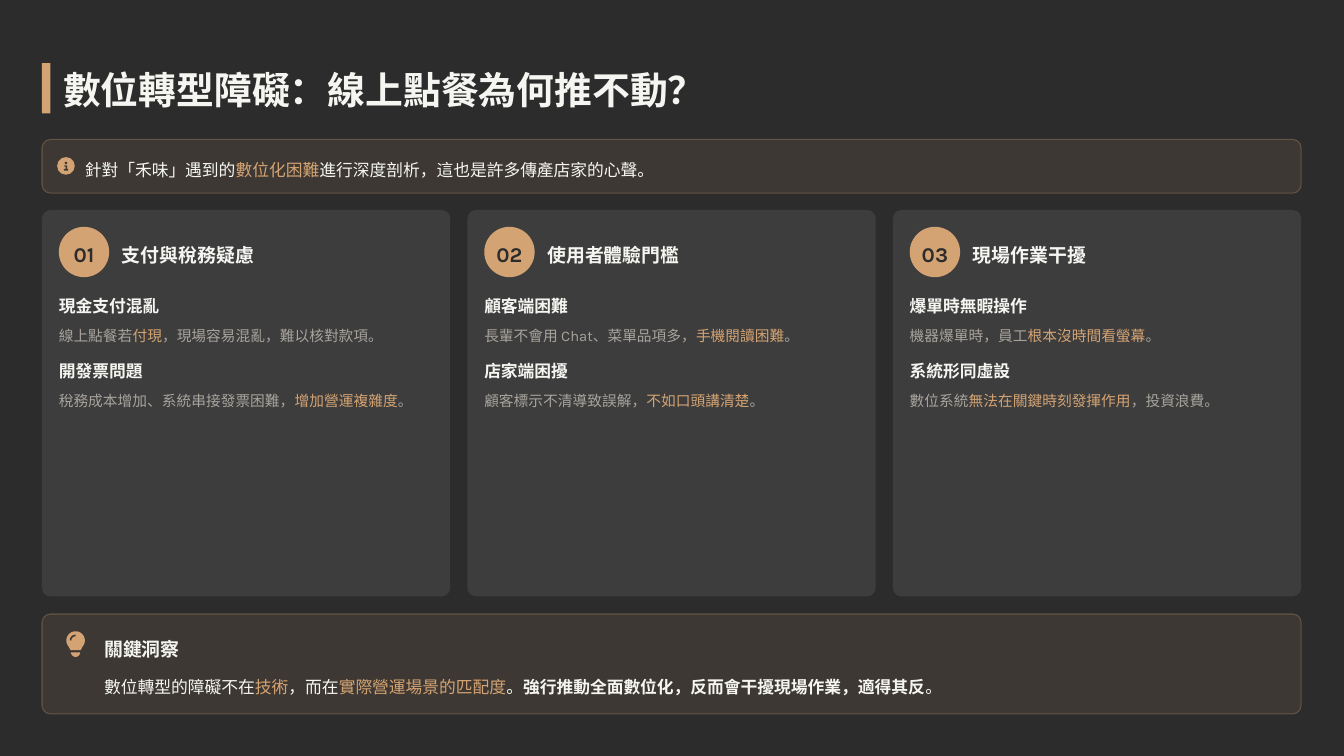
"""Build the slide on what holds back online ordering."""
import math
from dataclasses import dataclass
from typing import Any

import lxml.etree
import pptx
import pptx.dml.color
import pptx.enum.shapes
import pptx.enum.text
import pptx.oxml.ns
import pptx.util

UNIT = 10160
KARLA = "Karla"
NOTO = "Noto Sans CJK SC"
HUES = {
    "back": "2C2C2C",
    "card": "3D3D3D",
    "gold": "D4A373",
    "light": "F5F5F1",
    "gray": "A8A39D",
    "band": "3D3833",
}
KINDS = pptx.enum.shapes.MSO_SHAPE
ALIGN = pptx.enum.text.PP_ALIGN
ANCHOR = pptx.enum.text.MSO_ANCHOR


@dataclass(frozen=True)
class Style:
    size: int
    font: str = KARLA
    hue: str = "light"
    bold: bool = False


@dataclass(frozen=True)
class Line:
    text: str
    style: Style
    space: float
    before: int = 0


@dataclass(frozen=True)
class Card:
    title: str
    items: tuple[tuple[str, str], ...]


HEAD = Style(18, NOTO, bold=True)
ITEM = Style(16, bold=True)
NOTE = Style(14, hue="gray")
PLAIN = Style(16)

CARDS = (
    Card("支付與稅務疑慮", (
        ("現金支付混亂", "線上點餐若|*付現|，現場容易混亂，難以核對款項。"),
        ("開發票問題", "稅務成本增加、系統串接發票困難，|*增加營運複雜度|。"),
    )),
    Card("使用者體驗門檻", (
        ("顧客端困難", "長輩不會用 Chat、菜單品項多，|*手機閱讀困難|。"),
        ("店家端困擾", "顧客標示不清導致誤解，|*不如口頭講清楚|。"),
    )),
    Card("現場作業干擾", (
        ("爆單時無暇操作", "機器爆單時，員工|*根本沒時間看螢幕|。"),
        ("系統形同虛設", "數位系統|*無法在關鍵時刻發揮作用|，投資浪費。"),
    )),
)


def px(num: float) -> int:
    return round(num * UNIT)


def tint(hue: str) -> Any:
    return pptx.dml.color.RGBColor.from_string(HUES[hue])


def fade(part: Any, share: int) -> None:
    tag = pptx.oxml.ns.qn("a:srgbClr")
    for node in part.iter(tag):
        lxml.etree.SubElement(node, pptx.oxml.ns.qn("a:alpha"), val=str(share * 1000))


def paint(shape: Any, hue: str) -> None:
    shape.shadow.inherit = False
    shape.fill.solid()
    shape.fill.fore_color.rgb = tint(hue)
    shape.line.fill.background()


def block(slide: Any, kind: Any, x: float, y: float, w: float, h: float, hue: str) -> Any:
    shape = slide.shapes.add_shape(kind, px(x), px(y), px(w), px(h))
    paint(shape, hue)
    return shape


def panel(slide: Any, x: float, y: float, w: float, h: float, hue: str) -> Any:
    shape = block(slide, KINDS.ROUNDED_RECTANGLE, x, y, w, h, hue)
    shape.adjustments[0] = 10 / min(w, h)
    return shape


def band(slide: Any, y: int, h: int) -> None:
    shape = panel(slide, 50, y, 1499, h, "gold")
    fade(shape.fill._xPr.find(pptx.oxml.ns.qn("a:solidFill")), 10)
    shape.line.color.rgb = tint("gold")
    shape.line.width = pptx.util.Pt(1)
    fade(shape.line._ln, 30)


def trace(slide: Any, spots: list[tuple[float, float]], close: bool = True) -> Any:
    ends = [(px(x), px(y)) for x, y in spots]
    form = slide.shapes.build_freeform(*ends[0])
    form.add_line_segments(ends[1:], close=close)
    return form.convert_to_shape()


def arc(x: float, y: float, r: float, start: int, stop: int) -> list[tuple[float, float]]:
    turns = [math.radians(deg) for deg in range(start, stop + 1, 10)]
    return [(x + r * math.cos(t), y + r * math.sin(t)) for t in turns]


def dress(run: Any, style: Style, mark: str) -> None:
    run.font.size = pptx.util.Pt(style.size)
    run.font.name = style.font
    run.font.bold = style.bold or mark == "#"
    run.font.color.rgb = tint("gold" if mark == "*" else style.hue)
    props = run.font._element
    lxml.etree.SubElement(props, pptx.oxml.ns.qn("a:ea"), typeface=NOTO)


def write(shape: Any, box: tuple[float, ...], lines: list[Line],
          anchor: Any = ANCHOR.MIDDLE, align: Any = ALIGN.LEFT) -> None:
    shape.left, shape.top, shape.width, shape.height = map(px, box)
    frame = shape.text_frame
    frame.auto_size = pptx.enum.text.MSO_AUTO_SIZE.NONE
    frame.word_wrap = True
    frame.vertical_anchor = anchor
    frame.margin_left = frame.margin_right = frame.margin_top = frame.margin_bottom = 0
    for rank, line in enumerate(lines):
        para = frame.add_paragraph() if rank else frame.paragraphs[0]
        props = para._p.get_or_add_pPr()
        props.set("marL", "0")
        props.set("indent", "0")
        lxml.etree.SubElement(props, pptx.oxml.ns.qn("a:buNone"))
        para.alignment = align
        para.space_before = pptx.util.Pt(line.before)
        para.line_spacing = line.space if line.space < 5 else pptx.util.Pt(line.space)
        for piece in line.text.split("|"):
            mark = piece[0] if piece[0] in "*#" else ""
            run = para.add_run()
            run.text = piece[len(mark):]
            dress(run, line.style, mark)
    shape.element.getparent().append(shape.element)


def label(slide: Any, box: tuple[float, ...], line: Line, align: Any = ALIGN.LEFT) -> None:
    write(slide.shapes.add_textbox(0, 0, 0, 0), box, [line], align=align)


def column(slide: Any, rank: int, card: Card) -> None:
    left = 50 + rank * 506.5
    panel(slide, left, 250, 486, 460, "card")
    block(slide, KINDS.OVAL, left + 20, 270, 60, 60, "gold")
    number = Line(f"{rank + 1:02}", Style(20, hue="back", bold=True), 1.2)
    label(slide, (left + 20, 282, 60, 35), number, ALIGN.CENTER)
    label(slide, (left + 95, 282, 374, 35), Line(card.title, HEAD, 1.3))
    lines = []
    for head, note in card.items:
        lines += [Line(head, ITEM, 27, 8 if lines else 0), Line(note, NOTE, 27)]
    write(slide.placeholders[rank + 1], (left + 20, 342, 456, 148), lines, ANCHOR.TOP)


def badge(slide: Any) -> None:
    block(slide, KINDS.OVAL, 68, 187, 21, 21, "gold")
    block(slide, KINDS.OVAL, 77, 192.5, 3, 3, "band")
    stem = [(76.5, 197), (80, 197), (80, 201), (81, 201), (81, 203),
            (76, 203), (76, 201), (78, 201), (78, 198.5), (76.5, 198.5)]
    paint(trace(slide, stem), "band")


def bulb(slide: Any) -> None:
    paint(trace(slide, arc(90, 762.5, 11, 140, 400) + [(96, 774), (84, 774)]), "gold")
    paint(trace(slide, arc(90, 776.5, 5.5, 0, 180)), "gold")
    glint = trace(slide, arc(90, 762.5, 6, 180, 270), False)
    glint.shadow.inherit = False
    glint.fill.background()
    glint.line.color.rgb = tint("band")
    glint.line.width = pptx.util.Pt(1.5)


def main() -> None:
    deck = pptx.Presentation()
    deck.slide_width, deck.slide_height = px(1600), px(900)
    slide = deck.slides.add_slide(deck.slide_layouts[4])
    slide.background.fill.solid()
    slide.background.fill.fore_color.rgb = tint("back")
    block(slide, KINDS.RECTANGLE, 50, 75, 10, 60, "gold")
    title = Line("數位轉型障礙：線上點餐為何推不動？", Style(36, NOTO, bold=True), 0.9)
    write(slide.shapes.title, (75, 85, 807, 50), [title])
    band(slide, 166, 64)
    badge(slide)
    intro = "針對「禾味」遇到的|*數位化困難|進行深度剖析，這也是許多傳產店家的心聲。"
    label(slide, (101, 181, 1443, 32), Line(intro, PLAIN, 1.4))
    for rank, card in enumerate(CARDS):
        column(slide, rank, card)
    band(slide, 731, 119)
    bulb(slide)
    moral = ("數位轉型的障礙不在|*技術|，而在|*實際營運場景的匹配度|。|"
             "#強行推動全面數位化，反而會干擾現場作業，適得其反|。")
    lines = [Line("關鍵洞察", Style(18, bold=True), 28), Line(moral, PLAIN, 28, 7)]
    write(slide.placeholders[4], (124, 751, 1025, 79), lines, ANCHOR.TOP)
    deck.save("out.pptx")


if __name__ == "__main__":
    main()
